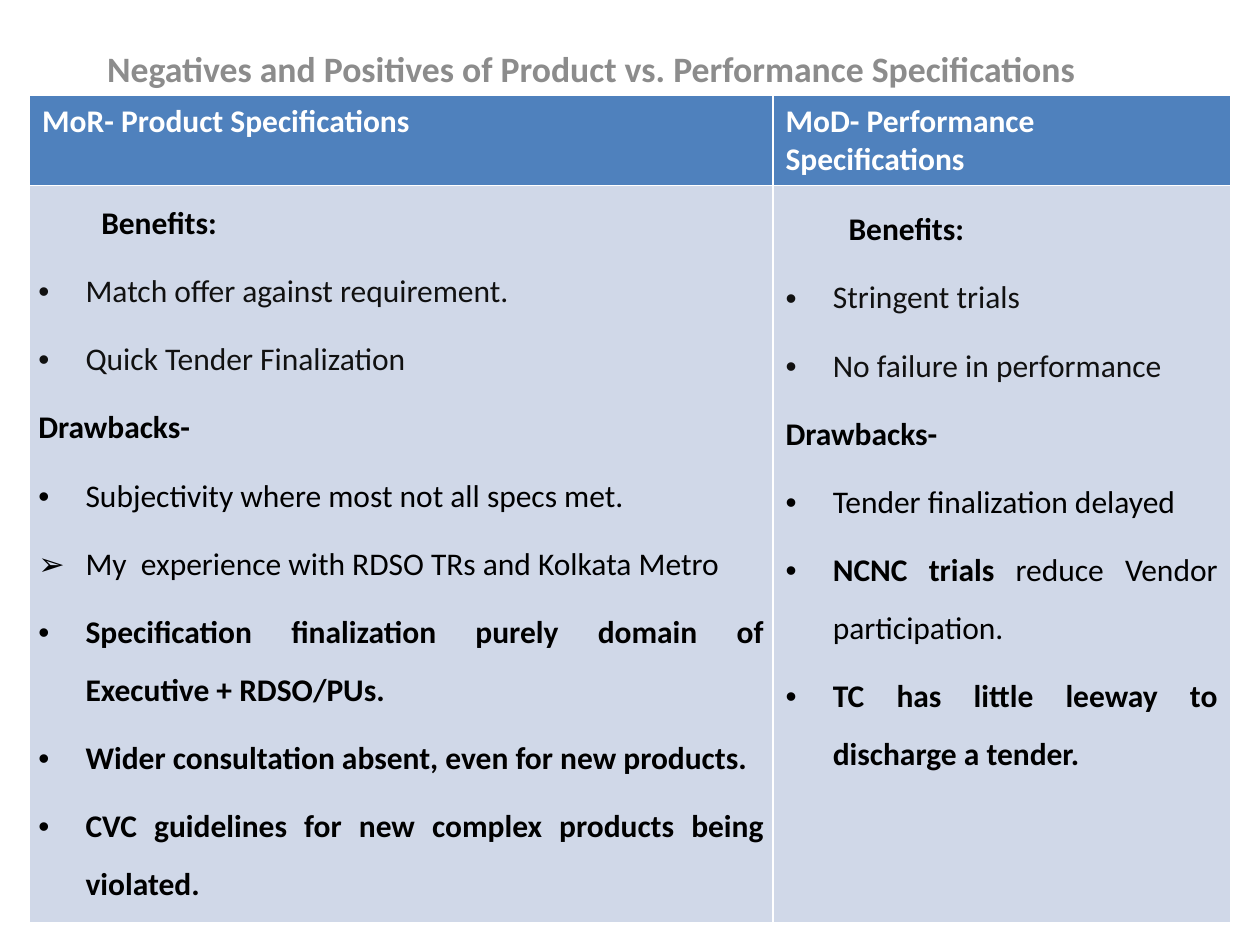
from lxml.etree import SubElement
from pptx import Presentation
from pptx.dml.color import RGBColor
from pptx.enum.text import MSO_ANCHOR, MSO_AUTO_SIZE, PP_ALIGN
from pptx.oxml.ns import qn
from pptx.util import Pt

GREY = RGBColor(0x8C, 0x8C, 0x8C)
WHITE = RGBColor(0xFF, 0xFF, 0xFF)
BLACK = RGBColor(0x00, 0x00, 0x00)
NEAR_BLACK = RGBColor(0x11, 0x11, 0x11)
HEADER_BLUE = RGBColor(0x4F, 0x81, 0xBD)
BODY_BLUE = RGBColor(0xD0, 0xD8, 0xE8)


def add_run(paragraph, text, size, color, bold):
    run = paragraph.add_run()
    run.text = text
    run.font.name = "Calibri"
    run.font.size = Pt(size)
    run.font.color.rgb = color
    run.font.bold = bold


def format_item(paragraph, bullet, left, indent):
    """Justify a cell paragraph and give it its indents and optional bullet."""
    paragraph.alignment = PP_ALIGN.JUSTIFY
    paragraph.line_spacing = 1.5
    paragraph.space_after = Pt(6)
    properties = paragraph._p.get_or_add_pPr()
    properties.set("marL", str(Pt(left)))
    properties.set("indent", str(Pt(indent)))
    if bullet:
        SubElement(properties, qn("a:buFont"), typeface="Arial")
        SubElement(properties, qn("a:buChar"), char=bullet)
    else:
        SubElement(properties, qn("a:buNone"))


presentation = Presentation()
presentation.slide_width, presentation.slide_height = Pt(720), Pt(540)
slide = presentation.slides.add_slide(presentation.slide_layouts[5])

title = slide.shapes.title
title.left, title.top, title.width, title.height = Pt(54), Pt(15), Pt(612), Pt(39.7)
title_frame = title.text_frame
title_frame.auto_size = MSO_AUTO_SIZE.NONE
title_frame.vertical_anchor = MSO_ANCHOR.BOTTOM
title_frame.paragraphs[0].alignment = PP_ALIGN.LEFT
add_run(title_frame.paragraphs[0],
        "Negatives and Positives of Product vs. Performance Specifications",
        20.4, GREY, True)

# Each item: bullet, then runs of (text, color, bold).
BENEFITS = ("", [("Benefits:", BLACK, True)])
DRAWBACKS = ("", [("Drawbacks-", BLACK, True)])
columns = [
    ("MoR- Product Specifications", 424.8, [
        BENEFITS,
        ("•", [("Match offer against requirement.", NEAR_BLACK, False)]),
        ("•", [("Quick Tender Finalization", NEAR_BLACK, False)]),
        DRAWBACKS,
        ("•", [("Subjectivity where most not all specs met.", BLACK, False)]),
        ("➢", [("My  experience with RDSO TRs and Kolkata Metro", BLACK, False)]),
        ("•", [("Specification finalization purely domain of Executive + RDSO/PUs.",
                BLACK, True)]),
        ("•", [("Wider consultation absent, even for new products.", BLACK, True)]),
        ("•", [("CVC guidelines for new complex products being violated.",
                BLACK, True)]),
    ]),
    ("MoD- Performance Specifications", 261.4, [
        BENEFITS,
        ("•", [("Stringent trials", NEAR_BLACK, False)]),
        ("•", [("No failure in performance", NEAR_BLACK, False)]),
        DRAWBACKS,
        ("•", [("Tender finalization delayed", BLACK, False)]),
        ("•", [("NCNC trials ", BLACK, True),
               ("reduce Vendor participation.", BLACK, False)]),
        ("•", [("TC has little leeway to discharge a tender.", BLACK, True)]),
    ]),
]

# The default table style supplies the white cell borders.
table = slide.shapes.add_table(2, 2, Pt(16.9), Pt(54.7), Pt(686.2), Pt(468.7)).table
table.rows[0].height, table.rows[1].height = Pt(47.5), Pt(421.2)

for index, (heading, width, items) in enumerate(columns):
    table.columns[index].width = Pt(width)
    header, body = table.cell(0, index), table.cell(1, index)
    for cell, color in ((header, HEADER_BLUE), (body, BODY_BLUE)):
        cell.fill.solid()
        cell.fill.fore_color.rgb = color
    add_run(header.text_frame.paragraphs[0], heading, 18, WHITE, True)

    for number, item in enumerate(items):
        bullet, runs = item
        frame = body.text_frame
        paragraph = frame.add_paragraph() if number else frame.paragraphs[0]
        left, indent = (36, 0) if item is BENEFITS else (27, -27)
        format_item(paragraph, bullet, left, indent)
        for text, color, bold in runs:
            add_run(paragraph, text, 18, color, bold)

specification_cell = table.cell(1, 0)
specification_cell.margin_left = specification_cell.margin_right = Pt(5)
specification_cell.margin_top = specification_cell.margin_bottom = Pt(0)

presentation.save("out.pptx")
